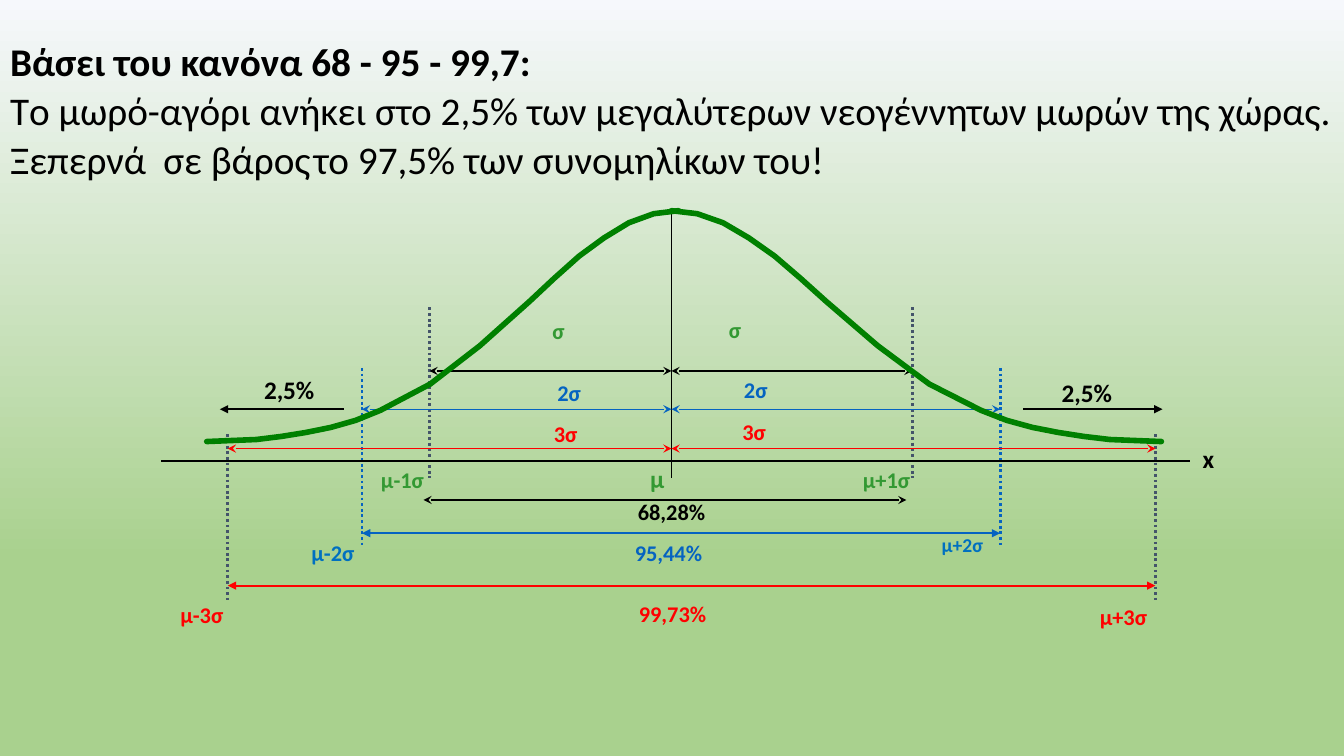
"""Builds a slide on the 68-95-99.7 rule of the normal curve."""
from copy import deepcopy

from lxml import etree
from pptx import Presentation
from pptx.dml.color import RGBColor
from pptx.enum.dml import MSO_LINE
from pptx.enum.shapes import MSO_CONNECTOR
from pptx.enum.text import MSO_ANCHOR, MSO_AUTO_SIZE, PP_ALIGN
from pptx.oxml.ns import qn
from pptx.util import Inches, Pt

DOTTED = MSO_LINE.ROUND_DOT
STRAIGHT = MSO_CONNECTOR.STRAIGHT
MIDDLE, TOP = MSO_ANCHOR.MIDDLE, MSO_ANCHOR.TOP
NO_FIT = MSO_AUTO_SIZE.NONE
LEFT, CENTER = PP_ALIGN.LEFT, PP_ALIGN.CENTER

COLORS = {
    "black": "000000", "red": "FF0000", "blue": "0563C1", "sky": "0070C0",
    "slate": "44546A", "green": "339933", "curve": "008000",
    "pale": "F6F8FC", "leaf": "A9D18E",
}
MEAN, BASELINE = 6.66, 4.57
TITLE = [
    "Βάσει του κανόνα 68 - 95 - 99,7:",
    "Tο μωρό-αγόρι ανήκει στο 2,5% των μεγαλύτερων νεογέννητων μωρών της χώρας.",
    "Ξεπερνά\tσε βάρος\tτο 97,5% των συνομηλίκων του!",
]
# Each band: left, right, guide top, guide bottom, arrow height, guide colour, arrow colour
BANDS = [
    (4.26, 9.05, 3.05, 4.74, 3.68, "slate", "black"),
    (3.59, 9.92, 3.65, 5.42, 4.06, "blue", "blue"),
    (2.26, 11.46, 4.31, 5.95, 4.45, "slate", "red"),
]
# Each span: left, right, height, colour, arrowhead
SPANS = [
    (4.2, 8.99, 4.96, "black", "stealth"),
    (3.59, 9.92, 5.29, "blue", "triangle"),
    (2.26, 11.46, 5.81, "red", "triangle"),
]
# Each label: text, left, top, width, colour, size, alignment
LABELS = [
    ("2,5%", 2.52, 3.66, 0.75, "black", 18, LEFT),
    ("2,5%", 10.43, 3.69, 0.75, "black", 18, LEFT),
    ("μ", 6.35, 4.55, 0.69, "green", 18, LEFT),
    ("x", 11.83, 4.35, 0.59, "black", 18, LEFT),
    ("μ-1σ", 3.68, 4.58, 1.32, "green", 16, LEFT),
    ("μ+1σ", 8.46, 4.57, 1.44, "green", 16, LEFT),
    ("μ-2σ", 2.99, 5.3, 1.36, "sky", 16, LEFT),
    ("μ+2σ", 9.24, 5.24, 1.44, "sky", 14, LEFT),
    ("μ-3σ", 1.69, 5.91, 1.36, "red", 16, LEFT),
    ("μ+3σ", 10.81, 5.93, 1.44, "red", 16, LEFT),
    ("σ", 5.38, 3.1, 0.74, "green", 16, LEFT),
    ("σ", 7.13, 3.09, 0.62, "green", 16, LEFT),
    ("2σ", 5.15, 3.71, 0.99, "blue", 16, CENTER),
    ("2σ", 7, 3.68, 0.99, "blue", 16, CENTER),
    ("3σ", 5.18, 4.12, 0.86, "red", 16, CENTER),
    ("3σ", 7.01, 4.1, 0.94, "red", 16, CENTER),
    ("68,28%", 5.69, 4.89, 1.94, "black", 16, CENTER),
    ("95,44%", 5.53, 5.3, 2.2, "blue", 16, CENTER),
    ("99,73%", 5.67, 5.9, 2, "red", 16, CENTER),
]
CURVE_STEPS = [0, 2, 3, 4, 5, 6, 7, 9, 11, 13, 14, 15, 16, 17, 18, 19]
CURVE_HEIGHTS = [4.38, 4.36, 4.33, 4.29, 4.24, 4.17, 4.07, 3.81,
                 3.43, 2.99, 2.76, 2.54, 2.36, 2.21, 2.12, 2.09]


def color(name):
    return RGBColor.from_string(COLORS[name])


def assign(target, values):
    for name, value in values.items():
        setattr(target, name, value)


class CurveSlide:
    """Holds the text style and the slide that elements are added to."""

    def __init__(self, deck, font="Calibri"):
        self.font = font
        self.slide = deck.slides.add_slide(deck.slide_layouts[5])

    def background(self, top, bottom, reach):
        fill = self.slide.background.fill
        fill.gradient()
        fill.gradient_angle = 270
        for stop, name in zip(fill.gradient_stops, (top, bottom)):
            stop.color.rgb = color(name)
        last = list(self.slide.element.iter(qn("a:gs")))[-1]
        last.addnext(deepcopy(last))
        last.set("pos", str(reach * 1000))

    def add_span(self, para, text, size, name, bold=True):
        span = para.add_run()
        span.text = text
        assign(span.font, {"name": self.font, "size": Pt(size), "bold": bold})
        span.font.color.rgb = color(name)

    def title(self, lines, left, top, width, height, tabs):
        box = self.slide.shapes.title
        assign(box, {"left": Inches(left), "top": Inches(top),
                     "width": Inches(width), "height": Inches(height)})
        frame = box.text_frame
        assign(frame, {"word_wrap": True, "auto_size": NO_FIT, "vertical_anchor": MIDDLE,
                       "margin_left": Inches(0.01), "margin_right": 0,
                       "margin_top": Inches(0.02), "margin_bottom": 0})
        for index, line in enumerate(lines):
            para = frame.add_paragraph() if index else frame.paragraphs[0]
            assign(para, {"alignment": LEFT, "space_before": Pt(1.1), "line_spacing": 1.0})
            if "\t" in line:
                stops = etree.SubElement(para._p.get_or_add_pPr(), qn("a:tabLst"))
                for tab in tabs:
                    etree.SubElement(stops, qn("a:tab"), pos=str(Inches(tab)), algn="l")
            self.add_span(para, line, 28, "black", bold=index == 0)

    def label(self, text, left, top, width, name, size, alignment):
        box = self.slide.shapes.add_textbox(
            Inches(left), Inches(top), Inches(width), Inches(0.1 + size / 58))
        assign(box.text_frame, {"word_wrap": True, "vertical_anchor": TOP})
        para = box.text_frame.paragraphs[0]
        para.alignment = alignment
        self.add_span(para, text, size, name)

    def line(self, start, end, name, width, dash=None, head=None, tail=None):
        line = self.slide.shapes.add_connector(STRAIGHT, *map(Inches, start + end))
        line.line.color.rgb = color(name)
        assign(line.line, {"width": Pt(width), "dash_style": dash})
        outline = line.line._ln
        for tag, kind in (("a:headEnd", head), ("a:tailEnd", tail)):
            if kind:
                etree.SubElement(outline, qn(tag), type=kind)
        etree.SubElement(line._element.spPr, qn("a:effectLst"))

    def half_curve(self, edge, peak, name, width):
        step = (peak - edge) / CURVE_STEPS[-1]
        points = [(Inches(edge + step * count), Inches(height))
                  for count, height in zip(CURVE_STEPS, CURVE_HEIGHTS)]
        builder = self.slide.shapes.build_freeform(*points[0])
        builder.add_line_segments(points[1:], close=False)
        curve = builder.convert_to_shape()
        curve.shadow.inherit = False
        curve.fill.background()
        curve.line.color.rgb = color(name)
        curve.line.width = Pt(width)
        curve.line._ln.set("cap", "rnd")


def main():
    deck = Presentation()
    assign(deck, {"slide_width": Inches(13.33), "slide_height": Inches(7.5)})
    page = CurveSlide(deck)
    page.background("pale", "leaf", 74)
    page.title(TITLE, 0.09, 0.35, 13.24, 1.46, tabs=(1.52, 3.01))

    page.line((MEAN, 2.09), (MEAN, 4.74), "black", 1)
    for left, right, top, bottom, height, guide, arrow in BANDS:
        for side in (left, right):
            page.line((side, top), (side, bottom), guide, 2, dash=DOTTED)
        for start, end in ((left, MEAN), (MEAN, right)):
            page.line((start, height), (end, height), arrow, 1, head="stealth", tail="stealth")
    for left, right, height, name, kind in SPANS:
        page.line((left, height), (right, height), name, 1.5, head=kind, tail=kind)
    for start, end in ((3.41, 2.18), (10.15, 11.53)):
        page.line((start, 4.06), (end, 4.06), "black", 1.5, tail="triangle")
    page.line((1.6, BASELINE), (11.8, BASELINE), "black", 1.5)
    for edge, peak in ((11.52, 6.66), (2.05, 6.73)):
        page.half_curve(edge, peak, "curve", 4)
    for label in LABELS:
        page.label(*label)
    deck.save("out.pptx")


if __name__ == "__main__":
    main()
